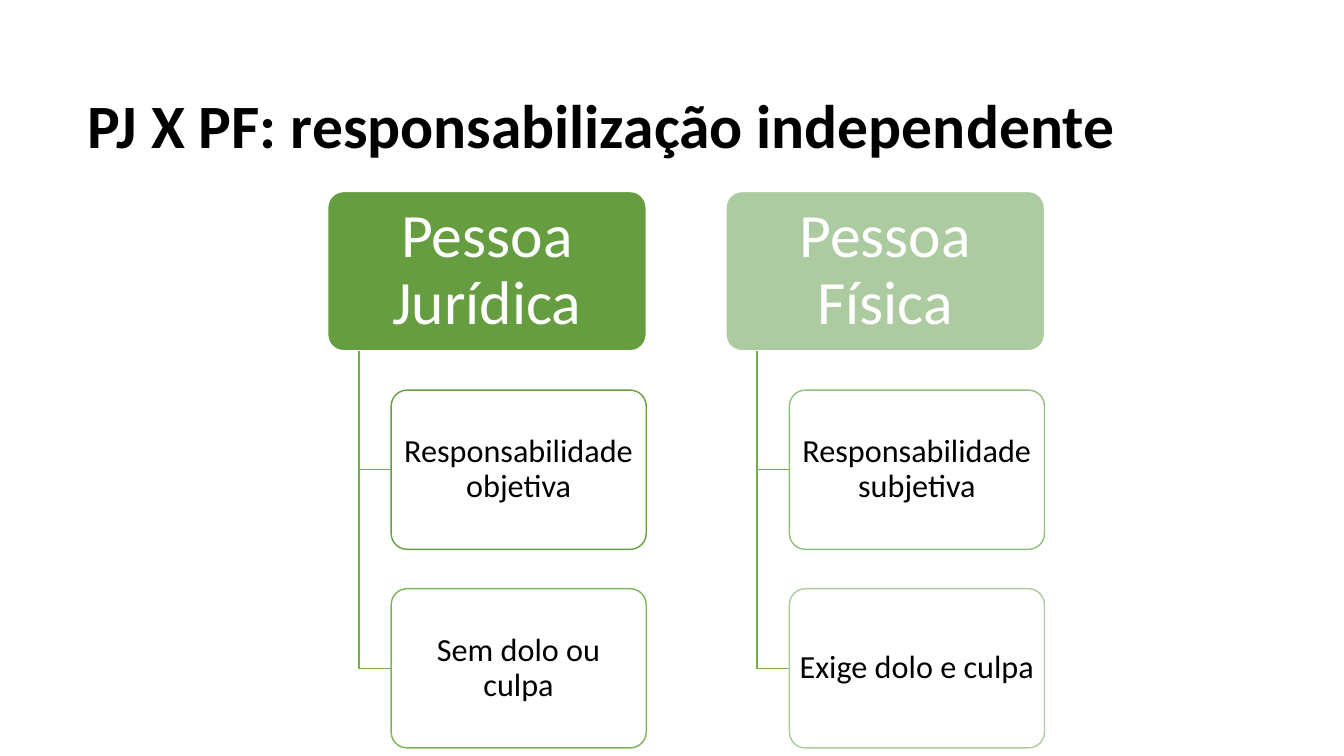
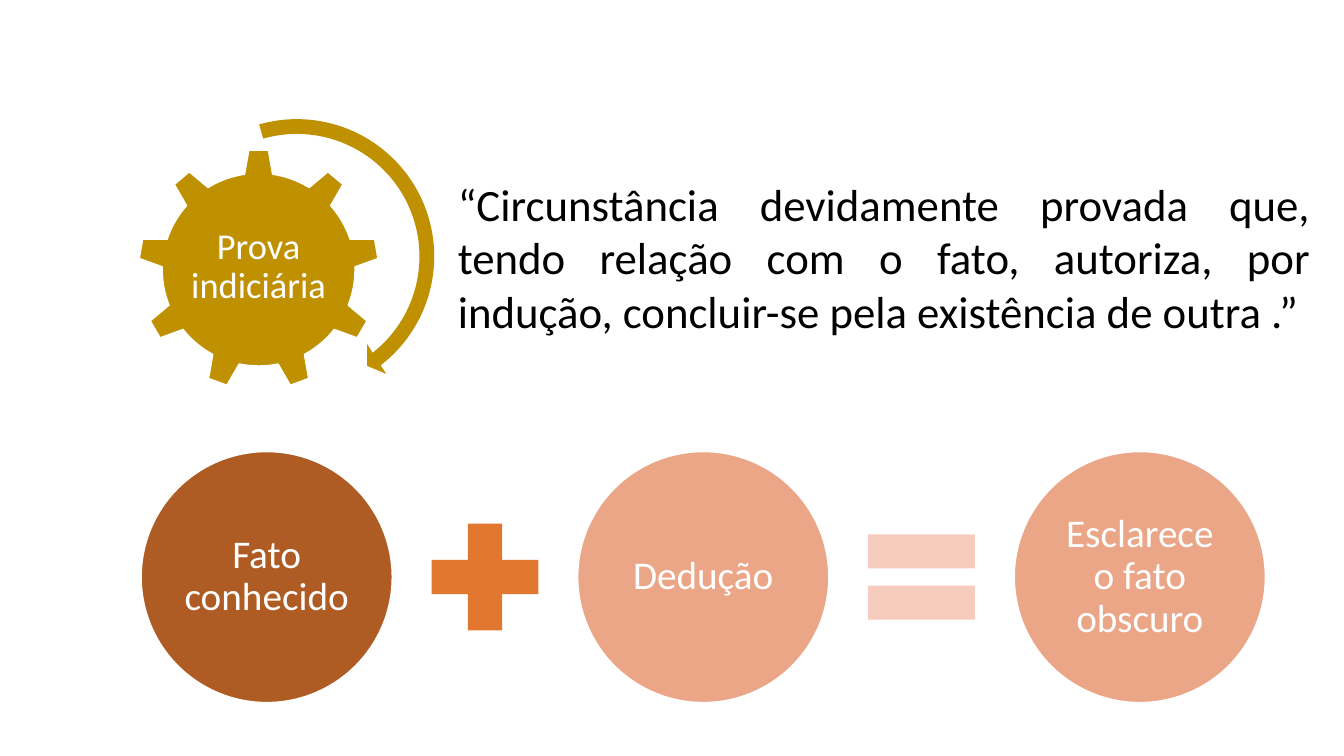
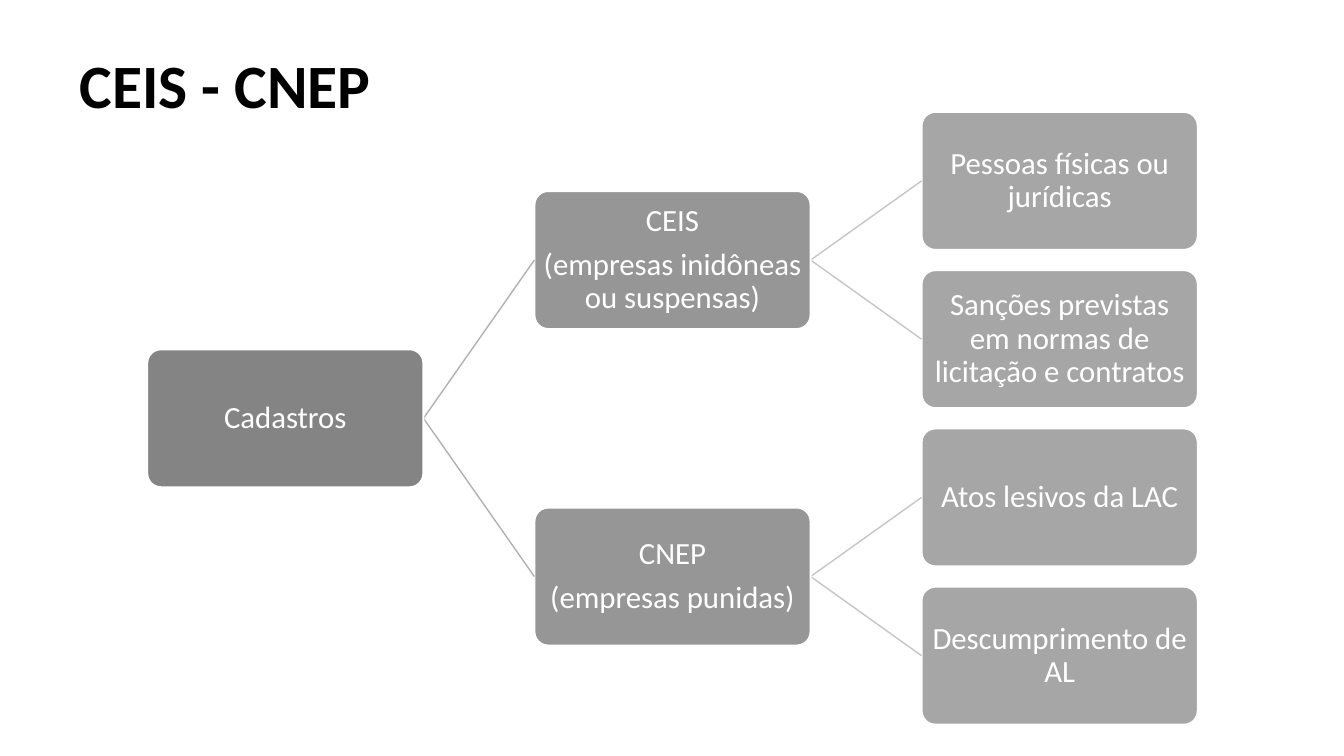
import lxml.etree
import pptx
import pptx.dml.color
import pptx.enum.shapes
import pptx.enum.text
import pptx.oxml.ns
import pptx.util

PX = 9144  # EMU in one px, 100 px to the inch
FONT = "Calibri"
BLACK, WHITE = "000000", "FFFFFF"
TITLE_ONLY, TITLE_AND_BODY = 5, 1

SHAPE = pptx.enum.shapes.MSO_SHAPE
ALIGN = pptx.enum.text.PP_ALIGN
ANCHOR = pptx.enum.text.MSO_ANCHOR
AUTO_SIZE = pptx.enum.text.MSO_AUTO_SIZE

TITLE_FONT = {"size": 44, "bold": True}
TITLE_PARAGRAPH = {"alignment": ALIGN.LEFT, "line_spacing": 0.9}
LABEL_PARAGRAPH = {"alignment": ALIGN.CENTER, "line_spacing": 0.9}
QUOTE_PARAGRAPH = {"alignment": ALIGN.JUSTIFY, "line_spacing": 1.0,
                   "space_before": pptx.util.Pt(0)}


def rgb(color):
    return pptx.dml.color.RGBColor.from_string(color)


def emu(*lengths):
    return [pptx.util.Emu(round(length * PX)) for length in lengths]


def set_values(target, values):
    for name, value in values.items():
        setattr(target, name, value)


def set_font(paragraph, size, color=BLACK, bold=False):
    set_values(paragraph.font, {"name": FONT, "size": pptx.util.Pt(size), "bold": bold})
    paragraph.font.color.rgb = rgb(color)


def set_line(part, color, width=1):
    part.line.color.rgb = rgb(color)
    part.line.width = pptx.util.Pt(width)


def place(part, box):
    set_values(part, dict(zip(("left", "top", "width", "height"), emu(*box))))


def add_title(slide, text, box, anchor):
    title = slide.shapes.title
    place(title, box)
    set_values(title.text_frame, {"text": text, "word_wrap": True,
                                  "auto_size": AUTO_SIZE.NONE, "vertical_anchor": anchor})
    paragraph = title.text_frame.paragraphs[0]
    set_values(paragraph, TITLE_PARAGRAPH)
    set_font(paragraph, **TITLE_FONT)


def add_figure(slide, preset, box, fill, line=None, line_width=1, adjustments=()):
    figure = slide.shapes.add_shape(preset, *emu(*box))
    figure.shadow.inherit = False
    figure.fill.solid()
    figure.fill.fore_color.rgb = rgb(fill)
    if line:
        set_line(figure, line, line_width)
    else:
        figure.line.fill.background()
    for index, value in enumerate(adjustments):
        figure.adjustments[index] = value
    return figure


def add_label(figure, text, size, color=WHITE, inset=4):
    """Write centred text in a figure, one paragraph for each line of text."""
    frame = figure.text_frame
    margin = emu(inset)[0]
    set_values(frame, {"text": text, "word_wrap": True, "vertical_anchor": ANCHOR.MIDDLE,
                       "margin_left": margin, "margin_right": margin,
                       "margin_top": margin, "margin_bottom": margin})
    for index, paragraph in enumerate(frame.paragraphs):
        set_values(paragraph, LABEL_PARAGRAPH)
        if index:
            paragraph.space_before = pptx.util.Pt(7.5)
        set_font(paragraph, size, color)


def add_rounded(slide, box, fill, line, line_width=1):
    return add_figure(slide, SHAPE.ROUNDED_RECTANGLE, box, fill, line, line_width, [0.1])


def add_branch(slide, start, end, color):
    branch = slide.shapes.add_connector(
        pptx.enum.shapes.MSO_CONNECTOR.STRAIGHT, *emu(*start, *end))
    set_line(branch, color)
    lxml.etree.SubElement(branch._element.spPr, pptx.oxml.ns.qn("a:effectLst"))


def add_elbow(slide, start, end, color):
    """Draw a line down from start, then across to end."""
    outline = slide.shapes.build_freeform(*start, scale=PX)
    outline.add_line_segments([(start[0], end[1]), end], close=False)
    elbow = outline.convert_to_shape()
    elbow.shadow.inherit = False
    elbow.fill.background()
    set_line(elbow, color)


def add_person_column(slide, left, top, heading, heading_fill, traits):
    """Place a heading with its traits hanging below; traits are (text, outline)."""
    width, height, gap, indent, spine = 316, 158, 39, 63, 31
    head = add_rounded(slide, (left, top, width, height), heading_fill, WHITE)
    add_label(head, heading, 44, inset=8)
    for row, (text, outline) in enumerate(traits, start=1):
        trait_top = top + row * (height + gap)
        add_elbow(slide, (left + spine, top + height),
                  (left + indent, trait_top + height // 2), "73AE4C")
        trait = add_rounded(slide, (left + indent, trait_top, width - indent, height),
                            WHITE, outline)
        add_label(trait, text, 23, BLACK, inset=5)


def add_quote(slide, text, box):
    quote = slide.placeholders[1]
    place(quote, box)
    set_values(quote.text_frame, {"text": text, "word_wrap": True,
                                  "auto_size": AUTO_SIZE.SHAPE_TO_FIT_TEXT})
    paragraph = quote.text_frame.paragraphs[0]
    properties = paragraph._p.get_or_add_pPr()
    for name in ("marL", "indent"):
        properties.set(name, "0")
    lxml.etree.SubElement(properties, pptx.oxml.ns.qn("a:buNone"))
    set_values(paragraph, QUOTE_PARAGRAPH)
    set_font(paragraph, 32)


def add_gear(slide, left, top, text):
    color = "BF9000"
    gear = add_figure(slide, SHAPE.GEAR_9, (left, top, 239, 239), color, WHITE)
    add_label(gear, text, 26, inset=3)
    add_figure(slide, SHAPE.CIRCULAR_ARROW, (left + 11, top - 40, 293, 293), color,
               adjustments=[0.05, 3.13, 31.26, 152.45, 0.06])


def add_equation(slide, left, top, terms):
    """Place circles and signs in a row; a term is (preset, fill, text or None)."""
    circle, sign, gap = 249, 144, 20
    for preset, fill, text in terms:
        size = circle if text else sign
        box = (left, top + (circle - size) / 2, size, size)
        term = add_figure(slide, preset, box, fill, WHITE if text else None)
        if text:
            add_label(term, text, 28)
        left += size + gap


def add_tree(slide, left, top, node, level=0):
    """Draw a node, given as (text, children), centred on its children.

    Return the vertical centre of the node and the top of the next free row."""
    width, height, column_gap, row_gap = 274, 137, 110, 20
    fills, branch_colors = ("848484", "969696", "A6A6A6"), ("B1B1B1", "C6C6C6")
    text, children = node
    child_left = left + width + column_gap
    centres, next_top = [], top
    for child in children:
        centre, next_top = add_tree(slide, child_left, next_top, child, level + 1)
        centres.append(centre)
    if centres:
        middle = sum(centres) / len(centres)
    else:
        middle, next_top = top + height / 2, top + height + row_gap
    for centre in centres:
        add_branch(slide, (left + width, middle), (child_left, centre), branch_colors[level])
    box = add_rounded(slide, (left, middle - height / 2, width, height),
                      fills[level], WHITE, 1.5)
    add_label(box, text, 22, inset=2)
    return middle, next_top


def build_liability(slide):
    add_title(slide, "PJ X PF: responsabilização independente", (77, 87, 1050, 82),
              ANCHOR.MIDDLE)
    add_person_column(slide, 325, 190, "Pessoa Jurídica", "669D40", [
        ("Responsabilidade objetiva", "669D40"), ("Sem dolo ou culpa", "7BB459")])
    add_person_column(slide, 720, 190, "Pessoa Física", "ADCBA0", [
        ("Responsabilidade subjetiva", "94BE7D"), ("Exige dolo e culpa", "ADCBA0")])


def build_evidence(slide):
    title = slide.shapes.title._element
    title.getparent().remove(title)
    add_quote(slide, "“Circunstância devidamente provada que, tendo relação com o fato, "
              "autoriza, por indução, concluir-se pela existência de outra .”",
              (444, 170, 866, 172))
    add_equation(slide, 140, 448, [
        (SHAPE.OVAL, "AF5C24", "Fato conhecido"),
        (SHAPE.MATH_PLUS, "E2772F", None),
        (SHAPE.OVAL, "EBA587", "Dedução"),
        (SHAPE.MATH_EQUAL, "F6CCBF", None),
        (SHAPE.OVAL, "EBA587", "Esclarece o fato obscuro")])
    add_gear(slide, 137, 148, "Prova indiciária")


def build_registers(slide):
    add_title(slide, "CEIS - CNEP", (69, 50, 1050, 162), ANCHOR.TOP)
    add_tree(slide, 146, 111, ("Cadastros", [
        ("CEIS\n(empresas inidôneas ou suspensas)", [
            ("Pessoas físicas ou jurídicas", []),
            ("Sanções previstas em normas de licitação e contratos", [])]),
        ("CNEP\n(empresas punidas)", [
            ("Atos lesivos da LAC", []),
            ("Descumprimento de AL", [])])]))


def main():
    deck = pptx.Presentation()
    deck.slide_width, deck.slide_height = emu(1333, 750)
    for layout, build in ((TITLE_ONLY, build_liability),
                          (TITLE_AND_BODY, build_evidence),
                          (TITLE_ONLY, build_registers)):
        build(deck.slides.add_slide(deck.slide_layouts[layout]))
    deck.save("out.pptx")


if __name__ == "__main__":
    main()
